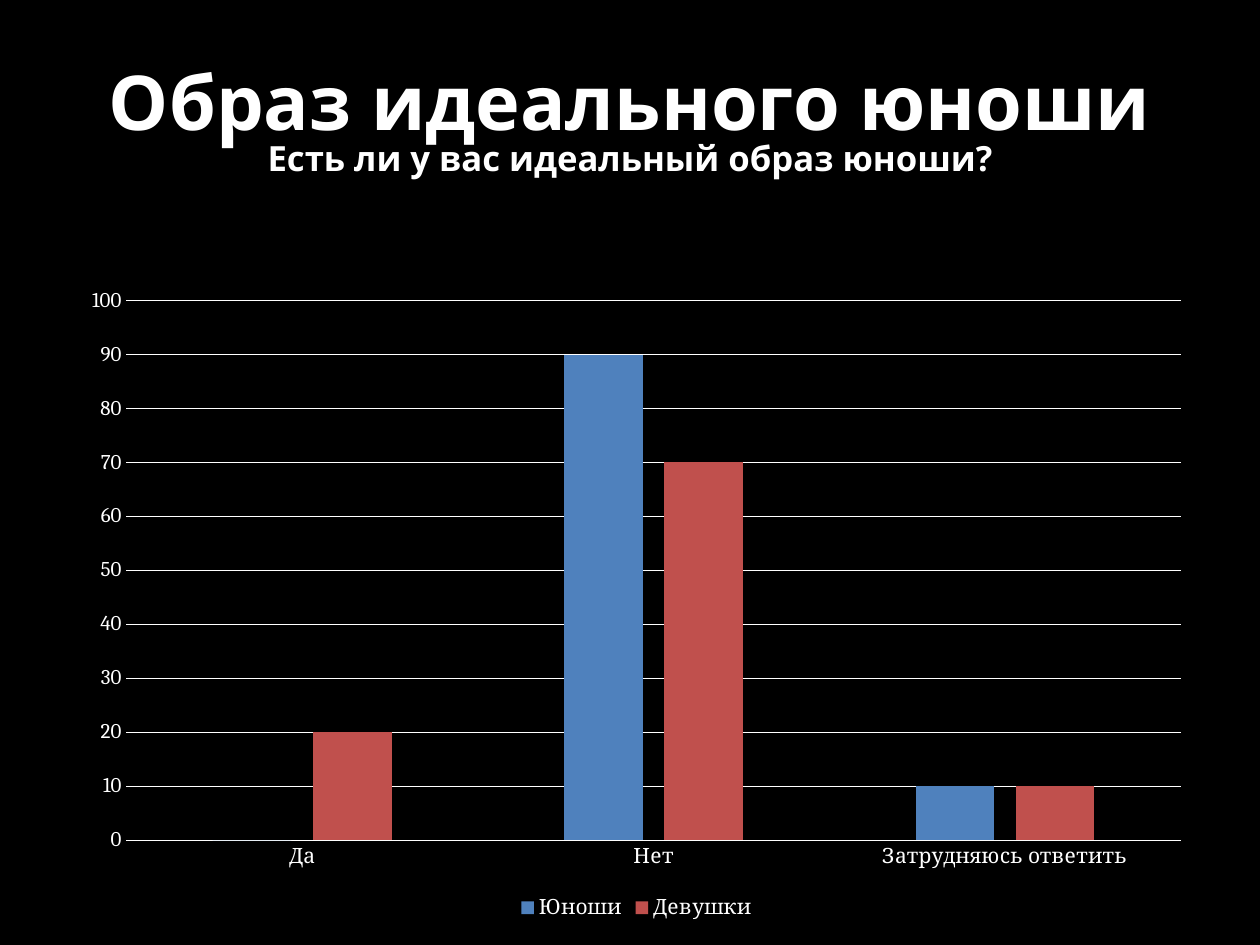
from pptx import Presentation
from pptx.chart.data import CategoryChartData
from pptx.dml.color import RGBColor
from pptx.enum.chart import XL_CHART_TYPE, XL_LEGEND_POSITION, XL_TICK_MARK
from pptx.enum.text import MSO_ANCHOR, PP_ALIGN
from pptx.util import Cm, Pt

COLORS = {"ground": "000000", "ink": "FFFFFF", "boys": "4F81BD", "girls": "C0504D"}


def rgb(name):
    return RGBColor.from_string(COLORS[name])


class SurveySlide:
    title_font = "Open Sans"
    chart_font = "Cambria"

    def __init__(self, presentation):
        self.slide = presentation.slides.add_slide(presentation.slide_layouts[6])
        ground = self.slide.background.fill
        ground.solid()
        ground.fore_color.rgb = rgb("ground")

    def style_font(self, font, name, size=None):
        font.name = name
        font.color.rgb = rgb("ink")
        if size:
            font.size = Pt(size)

    def style_line(self, line):
        line.color.rgb = rgb("ink")
        line.width = Pt(0.75)

    def add_title(self, heading, question, left, top, width, height):
        """Put the heading and its smaller question in one centred paragraph."""
        frame = self.slide.shapes.add_textbox(left, top, width, height).text_frame
        frame.word_wrap = True
        frame.vertical_anchor = MSO_ANCHOR.MIDDLE
        # Offsets the upward shift caused by the tight line spacing
        frame.margin_top = Cm(0.48)
        paragraph = frame.paragraphs[0]
        paragraph.alignment = PP_ALIGN.CENTER
        paragraph.line_spacing = 0.8
        self.style_font(paragraph.font, self.title_font)
        paragraph.font.bold = True
        for text, size in ((heading, 43.2), (question, 19.8)):
            if paragraph.runs:
                paragraph.add_line_break()
            run = paragraph.add_run()
            run.text = text
            self.style_font(run.font, self.title_font, size)

    def add_columns(self, answers, groups, left, top, width, height):
        """Draw clustered columns; groups holds (name, values, colour) rows."""
        data = CategoryChartData()
        data.categories = answers
        for name, values, _ in groups:
            data.add_series(name, values)
        chart = self.slide.shapes.add_chart(
            XL_CHART_TYPE.COLUMN_CLUSTERED, left, top, width, height, data
        ).chart
        chart.has_title = False
        self.style_font(chart.font, self.chart_font, 10)

        columns = chart.plots[0]
        columns.gap_width = 219
        columns.overlap = -27
        columns.vary_by_categories = False
        for series, (_, _, color) in zip(columns.series, groups):
            series.format.fill.solid()
            series.format.fill.fore_color.rgb = rgb(color)

        for axis in (chart.category_axis, chart.value_axis):
            axis.major_tick_mark = axis.minor_tick_mark = XL_TICK_MARK.NONE
            self.style_font(axis.tick_labels.font, self.chart_font, 12)
        self.style_line(chart.category_axis.format.line)
        percent = chart.value_axis
        percent.minimum_scale, percent.maximum_scale, percent.major_unit = 0, 100, 10
        percent.format.line.fill.background()
        self.style_line(percent.major_gridlines.format.line)

        chart.has_legend = True
        chart.legend.position = XL_LEGEND_POSITION.BOTTOM
        chart.legend.include_in_layout = False
        self.style_font(chart.legend.font, self.chart_font, 12)


def main():
    presentation = Presentation()
    presentation.slide_width, presentation.slide_height = Cm(25.4), Cm(19.05)
    survey = SurveySlide(presentation)
    survey.add_title(
        "Образ идеального юноши",
        "Есть ли у вас идеальный образ юноши?",
        Cm(1.27), Cm(0.76), Cm(22.86), Cm(3.18),
    )
    survey.add_columns(
        ("Да", "Нет", "Затрудняюсь ответить"),
        (("Юноши", (0, 90, 10), "boys"), ("Девушки", (20, 70, 10), "girls")),
        Cm(1.4), Cm(5.56), Cm(22.86), Cm(13.08),
    )
    presentation.save("out.pptx")


if __name__ == "__main__":
    main()
